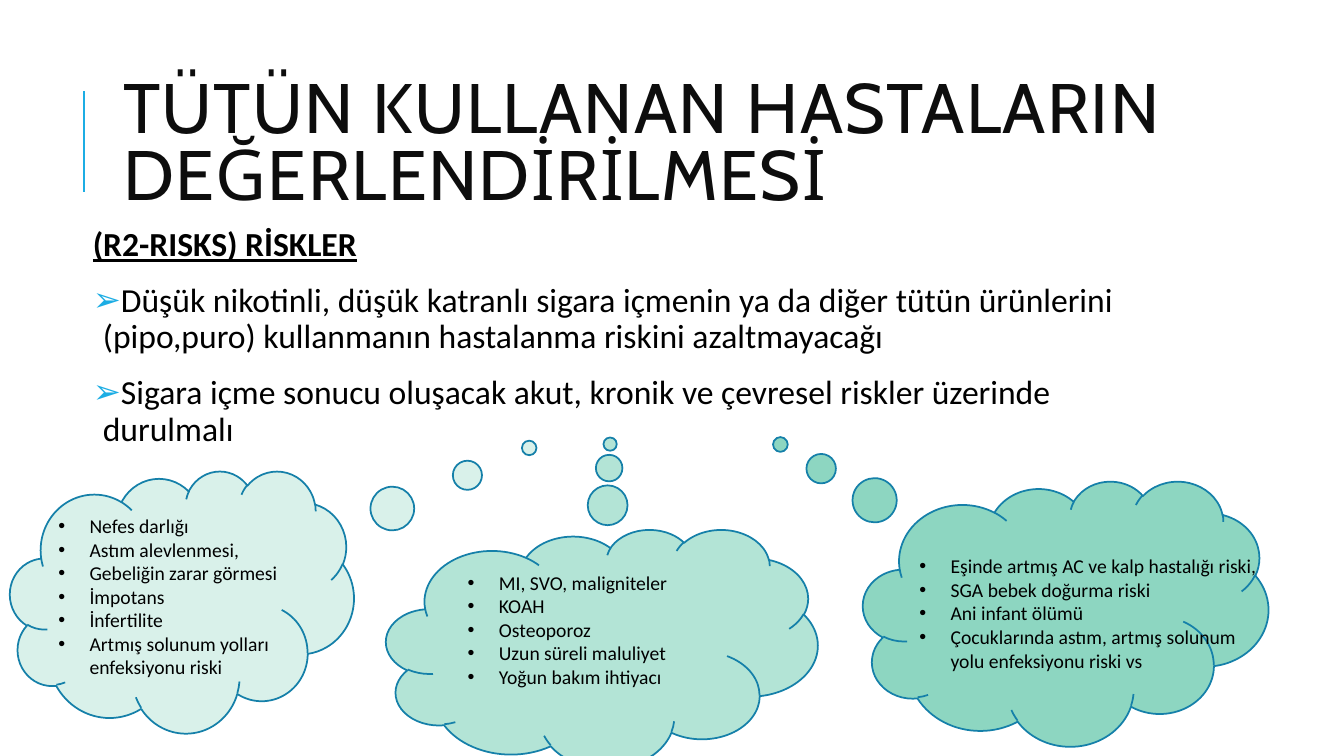
from lxml.etree import SubElement
from pptx import Presentation
from pptx.dml.color import RGBColor
from pptx.enum.shapes import MSO_CONNECTOR, MSO_SHAPE
from pptx.enum.text import MSO_ANCHOR, MSO_AUTO_SIZE, PP_ALIGN
from pptx.oxml.ns import qn
from pptx.util import Inches, Pt

COLORS = {"ink": "000000", "title": "0D0D0D", "accent": "1CADE4",
          "edge": "1580A9", "pale": "D9F1EA", "mint": "B3E4D6", "deep": "8DD6C1"}

TITLE = "TÜTÜN KULLANAN HASTALARIN DEĞERLENDİRİLMESİ"
HEAD = "(R2-RISKS) RİSKLER"
POINTS = [
    "Düşük nikotinli, düşük katranlı sigara içmenin ya da diğer tütün ürünlerini "
    "(pipo,puro) kullanmanın hastalanma riskini azaltmayacağı",
    "Sigara içme sonucu oluşacak akut, kronik ve çevresel riskler üzerinde durulmalı",
]
# Boxes are left, top, width, height in inches; tail is the callout's pointer.
CLOUDS = [
    {"fill": "pale", "box": (0.1, 4.67, 3.41, 2.6), "tail": (1.01, -0.587),
     "label": (0.48, 5.05, 2.55, 1.75),
     "items": ["Nefes darlığı", "Astım alevlenmesi,", "Gebeliğin zarar görmesi",
               "İmpotans", "İnfertilite", "Artmış solunum yolları enfeksiyonu riski"]},
    {"fill": "mint", "box": (3.83, 5.25, 4.28, 2.37), "tail": (0.019, -0.856),
     "label": (4.54, 5.61, 2.68, 1.28),
     "items": ["MI, SVO, maligniteler", "KOAH", "Osteoporoz",
               "Uzun süreli maluliyet", "Yoğun bakım ihtiyacı"]},
    {"fill": "deep", "box": (8.56, 4.77, 4.02, 2.63), "tail": (-0.704, -0.637),
     "label": (9.02, 5.45, 3.56, 1.28),
     "items": ["Eşinde artmış AC ve kalp hastalığı riski,", "SGA bebek doğurma riski",
               "Ani infant ölümü",
               "Çocuklarında astım, artmış solunum yolu enfeksiyonu riski vs"]},
]


def color(name):
    return RGBColor.from_string(COLORS[name])


def inches(box):
    return [Inches(v) for v in box]


def place(shape, box):
    shape.left, shape.top, shape.width, shape.height = inches(box)


def write(frame, text, size, font="Calibri", ink="ink", bold=False, under=False,
          bullet=None, tint=None, hang=0, lines=1, before=0, after=0, track=None):
    """Add one formatted paragraph, using the empty first one when there is one."""
    first = not frame.paragraphs[0].runs
    para = frame.paragraphs[0] if first else frame.add_paragraph()
    props = para._p.get_or_add_pPr()
    props.set("marL", str(Inches(hang)))
    props.set("indent", str(-Inches(hang)))
    if tint:
        shade = SubElement(props, qn("a:buClr"))
        SubElement(shade, qn("a:srgbClr"), val=COLORS[tint])
    if bullet:
        SubElement(props, qn("a:buFont"), typeface="Arial")
        SubElement(props, qn("a:buChar"), char=bullet)
    else:
        SubElement(props, qn("a:buNone"))
    para.alignment = PP_ALIGN.LEFT
    para.line_spacing = lines
    para.space_before = Pt(0 if first else before)
    para.space_after = Pt(after)
    run = para.add_run()
    run.text = text
    run.font.name, run.font.size = font, Pt(size)
    run.font.bold, run.font.underline = bold, under
    run.font.color.rgb = color(ink)
    if track:
        run._r.get_or_add_rPr().set("spc", str(track * 100))


def add_rule(slide):
    rule = slide.shapes.add_connector(
        MSO_CONNECTOR.STRAIGHT, *inches((0.83, 1.9, 0.83, 0.9)))
    rule.line.color.rgb = color("accent")
    rule.line.width = Pt(1.5)
    SubElement(rule._element.spPr, qn("a:effectLst"))


def add_cloud(slide, cloud):
    shape = slide.shapes.add_shape(MSO_SHAPE.CLOUD_CALLOUT, *inches(cloud["box"]))
    shape.shadow.inherit = False
    for i, value in enumerate(cloud["tail"]):
        shape.adjustments[i] = value
    shape.fill.solid()
    shape.fill.fore_color.rgb = color(cloud["fill"])
    shape.line.color.rgb = color("edge")
    shape.line.width = Pt(1.25)


def add_label(slide, cloud):
    frame = slide.shapes.add_textbox(*inches(cloud["label"])).text_frame
    frame.word_wrap = True
    frame.auto_size = MSO_AUTO_SIZE.SHAPE_TO_FIT_TEXT
    for item in cloud["items"]:
        write(frame, item, 14, bullet="•", hang=0.31)


def main():
    deck = Presentation()
    deck.slide_width, deck.slide_height = Inches(13.33), Inches(7.5)
    slide = deck.slides.add_slide(deck.slide_layouts[1])
    add_rule(slide)

    title, body = slide.placeholders
    place(title, (1.12, 0.64, 11.52, 1.64))
    frame = title.text_frame
    frame.auto_size = MSO_AUTO_SIZE.NONE
    frame.vertical_anchor = MSO_ANCHOR.MIDDLE
    write(frame, TITLE, 50, font="Cabin", ink="title", lines=0.8, track=1)

    place(body, (0.87, 2.21, 10.63, 4.4))
    frame = body.text_frame
    frame.auto_size = MSO_AUTO_SIZE.NONE
    frame.margin_left = frame.margin_right = Inches(0.05)
    frame.margin_top = frame.margin_bottom = Inches(0.05)
    gaps = {"lines": 0.9, "before": 12, "after": 2}
    write(frame, HEAD, 24, bold=True, under=True, **gaps)
    for point in POINTS:
        write(frame, point, 24, bullet="➢", tint="accent", hang=0.1, **gaps)

    for cloud in CLOUDS:
        add_cloud(slide, cloud)
    for cloud in CLOUDS:
        add_label(slide, cloud)
    deck.save("out.pptx")


if __name__ == "__main__":
    main()
